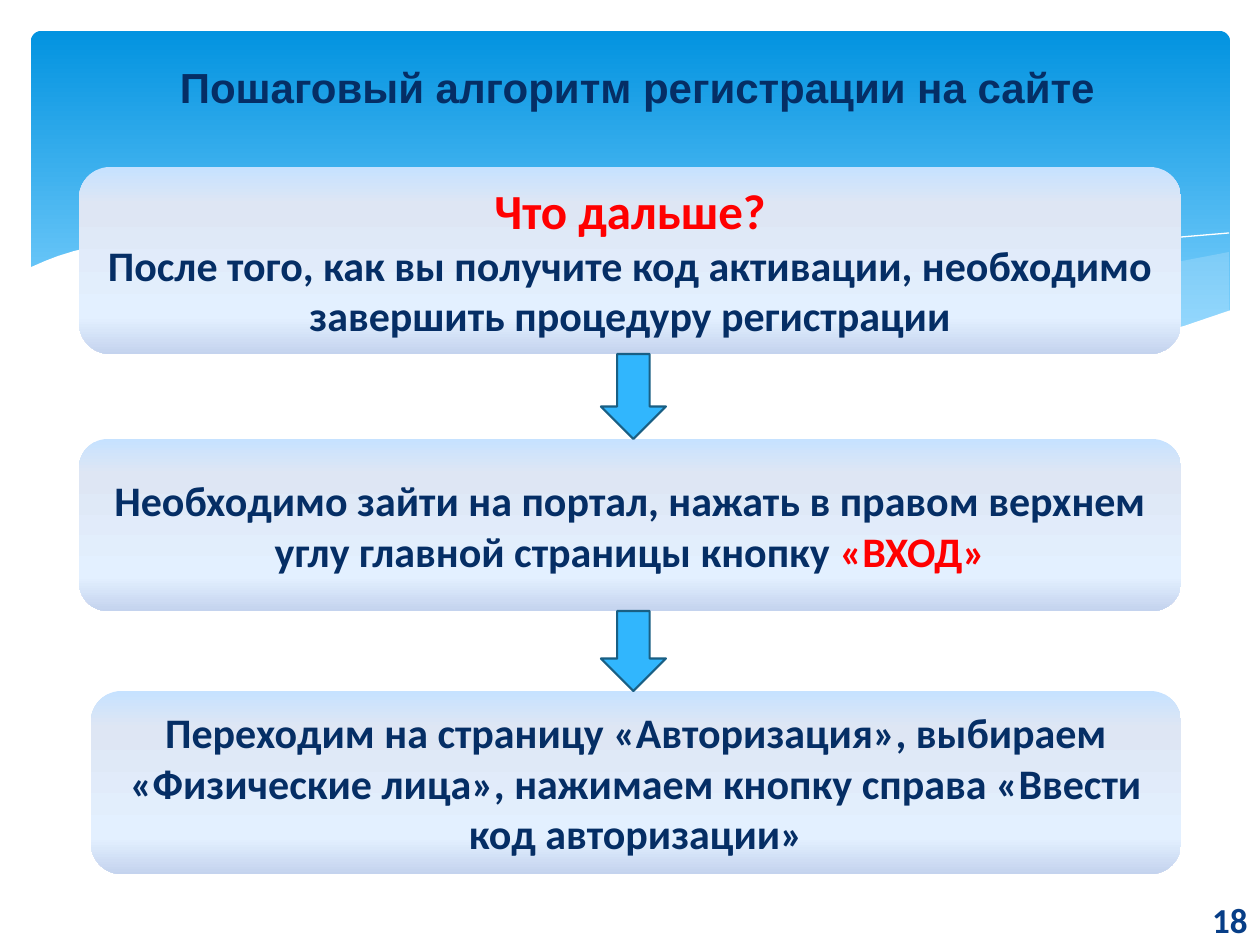
from lxml.etree import SubElement
from pptx import Presentation
from pptx.dml.color import RGBColor
from pptx.enum.shapes import MSO_SHAPE
from pptx.enum.text import MSO_ANCHOR, PP_ALIGN
from pptx.oxml.ns import qn
from pptx.util import Emu, Pt

COLORS = {
    "navy": "052E65", "red": "FF0000", "number": "073E87", "white": "FFFFFF",
    "wave": "C6E7FC", "arrow": "31B6FD", "arrow_line": "195F84",
}
BANNER_STOPS = [(0, "0293E0"), (90, "83D3FE")]
STEP_STOPS = [(0, "C6E2FF"), (20, "DEE6F4"), (80, "E3F0FF"), (100, "C4D3EE")]

RIGHT_WAVE = [
    (1198, 221), (1130, 234), (1054, 251), (951, 274), (858, 293), (802, 303), (874, 312),
    (954, 318), (1021, 318), (1078, 313), (1129, 303), (1165, 293), (1198, 280),
]
BACK_WAVE = [
    (1094, 313), (1024, 303), (945, 289), (858, 271), (762, 249), (686, 231), (617, 218),
    (555, 210), (498, 204), (448, 202), (402, 203), (363, 207), (329, 210), (400, 220),
    (478, 235), (535, 249), (637, 271), (726, 290), (807, 304), (880, 314), (943, 319),
    (1012, 319), (1073, 317),
]
LONG_CURVE = [
    (358, 215), (402, 208), (456, 205), (514, 205), (585, 208), (670, 217), (770, 231),
    (885, 254), (1016, 285), (1112, 312),
]
SHORT_CURVE = [
    (741, 293), (792, 279), (876, 258), (985, 234), (1079, 216), (1151, 206), (1198, 202),
]
WHITE_WAVE = [
    (1200, 279), (1153, 295), (1102, 308), (1040, 315), (972, 318), (907, 315), (836, 307),
    (759, 294), (668, 278), (568, 255), (462, 230), (397, 216), (337, 208), (284, 203),
    (235, 201), (192, 201), (153, 202), (119, 205), (89, 210), (65, 215), (43, 220),
    (27, 225), (14, 230), (-2, 237), (-2, 384), (1200, 384),
]


def px(n):
    return Emu(round(n * 914400 / 126))


def rgb(name):
    return RGBColor.from_string(COLORS[name])


def set_gradient(sp, stops):
    sp.fill.gradient()
    sp.fill.gradient_angle = 270
    gs_list = sp.element.spPr.find(qn("a:gradFill")).find(qn("a:gsLst"))
    for gs in list(gs_list):
        gs_list.remove(gs)
    for pos, color in stops:
        gs = SubElement(gs_list, qn("a:gs"), pos=str(pos * 1000))
        SubElement(gs, qn("a:srgbClr"), val=color)


def add_preset(s, kind, x, y, w, h):
    sp = s.shapes.add_shape(kind, px(x), px(y), px(w), px(h))
    sp.shadow.inherit = False
    sp.line.fill.background()
    return sp


def add_curve(s, x, y, points, closed):
    builder = s.shapes.build_freeform(*points[0], scale=914400 / 126)
    builder.add_line_segments(points[1:], close=closed)
    sp = builder.convert_to_shape(px(x), px(y))
    sp.shadow.inherit = False
    return sp


def add_wave(s, x, y, points, color, opacity=100):
    sp = add_curve(s, x, y, points, True)
    sp.line.fill.background()
    sp.fill.solid()
    sp.fill.fore_color.rgb = rgb(color)
    if opacity < 100:
        clr = sp.element.spPr.find(qn("a:solidFill")).find(qn("a:srgbClr"))
        SubElement(clr, qn("a:alpha"), val=str(opacity * 1000))


def add_banner(s, x, y, w, h):
    sp = add_preset(s, MSO_SHAPE.ROUNDED_RECTANGLE, x, y, w, h)
    sp.adjustments[0] = 0.03
    set_gradient(sp, BANNER_STOPS)
    add_wave(s, x, y, RIGHT_WAVE, "wave", 29)
    add_wave(s, x, y, BACK_WAVE, "wave", 40)
    for points in (LONG_CURVE, SHORT_CURVE):
        sp = add_curve(s, x, y, points, False)
        sp.fill.background()
        sp.line.color.rgb = rgb("white")
        sp.line.width = Pt(0)
    add_wave(s, x, y, WHITE_WAVE, "white")


def write_text(tf, paragraphs, anchor, align=PP_ALIGN.CENTER, font="Calibri"):
    tf.word_wrap = True
    tf.vertical_anchor = anchor
    for i, (size, runs) in enumerate(paragraphs):
        p = tf.add_paragraph() if i else tf.paragraphs[0]
        p.alignment = align
        p.font.name = font
        p.font.size = Pt(size)
        p.font.bold = True
        for text, color in runs:
            r = p.add_run()
            r.text = text
            r.font.color.rgb = rgb(color)


def add_label(s, x, y, w, h, *args, **kwargs):
    tb = s.shapes.add_textbox(px(x), px(y), px(w), px(h))
    write_text(tb.text_frame, *args, **kwargs)


def add_step(s, x, y, w, h, paragraphs):
    sp = add_preset(s, MSO_SHAPE.ROUNDED_RECTANGLE, x, y, w, h)
    set_gradient(sp, STEP_STOPS)
    write_text(sp.text_frame, paragraphs, MSO_ANCHOR.MIDDLE)


def add_arrow(s, x, y, w, h):
    sp = add_preset(s, MSO_SHAPE.DOWN_ARROW, x, y, w, h)
    sp.fill.solid()
    sp.fill.fore_color.rgb = rgb("arrow")
    sp.line.color.rgb = rgb("arrow_line")
    sp.line.width = Pt(1.25)


def add_flow(s, x, w, steps):
    right = x + w
    for indent, top, bottom, paragraphs in steps:
        left = x + indent
        add_step(s, left, top, right - left, bottom - top, paragraphs)
    for (_, _, bottom, _), (_, top, _, _) in zip(steps, steps[1:]):
        add_arrow(s, x + 522, bottom, 65, top - bottom)


def main():
    prs = Presentation()
    prs.slide_width, prs.slide_height = px(1260), px(945)
    s = prs.slides.add_slide(prs.slide_layouts[6])
    add_banner(s, 31, 31, 1199, 340)
    add_label(s, 15, 6, 1245, 112,
              [(24, [("Пошаговый алгоритм регистрации на сайте", "navy")])],
              MSO_ANCHOR.BOTTOM, font="Arial")
    add_flow(s, 79, 1102, [
        (0, 167, 354, [
            (28, [("Что дальше?", "red")]),
            (24, [("После того, как вы получите код активации, необходимо "
                   "завершить процедуру регистрации", "navy")]),
        ]),
        (0, 439, 611, [
            (24, [("Необходимо зайти на портал, нажать в правом верхнем "
                   "углу главной страницы кнопку ", "navy"), ("«ВХОД»", "red")]),
        ]),
        (12, 691, 874, [
            (24, [("Переходим на страницу «Авторизация», выбираем «Физические лица», "
                   "нажимаем кнопку справа «Ввести код авторизации»", "navy")]),
        ]),
    ])
    add_label(s, 1100, 895, 160, 50, [(20, [("18", "number")])],
              MSO_ANCHOR.MIDDLE, PP_ALIGN.RIGHT)
    prs.save("out.pptx")


if __name__ == "__main__":
    main()
